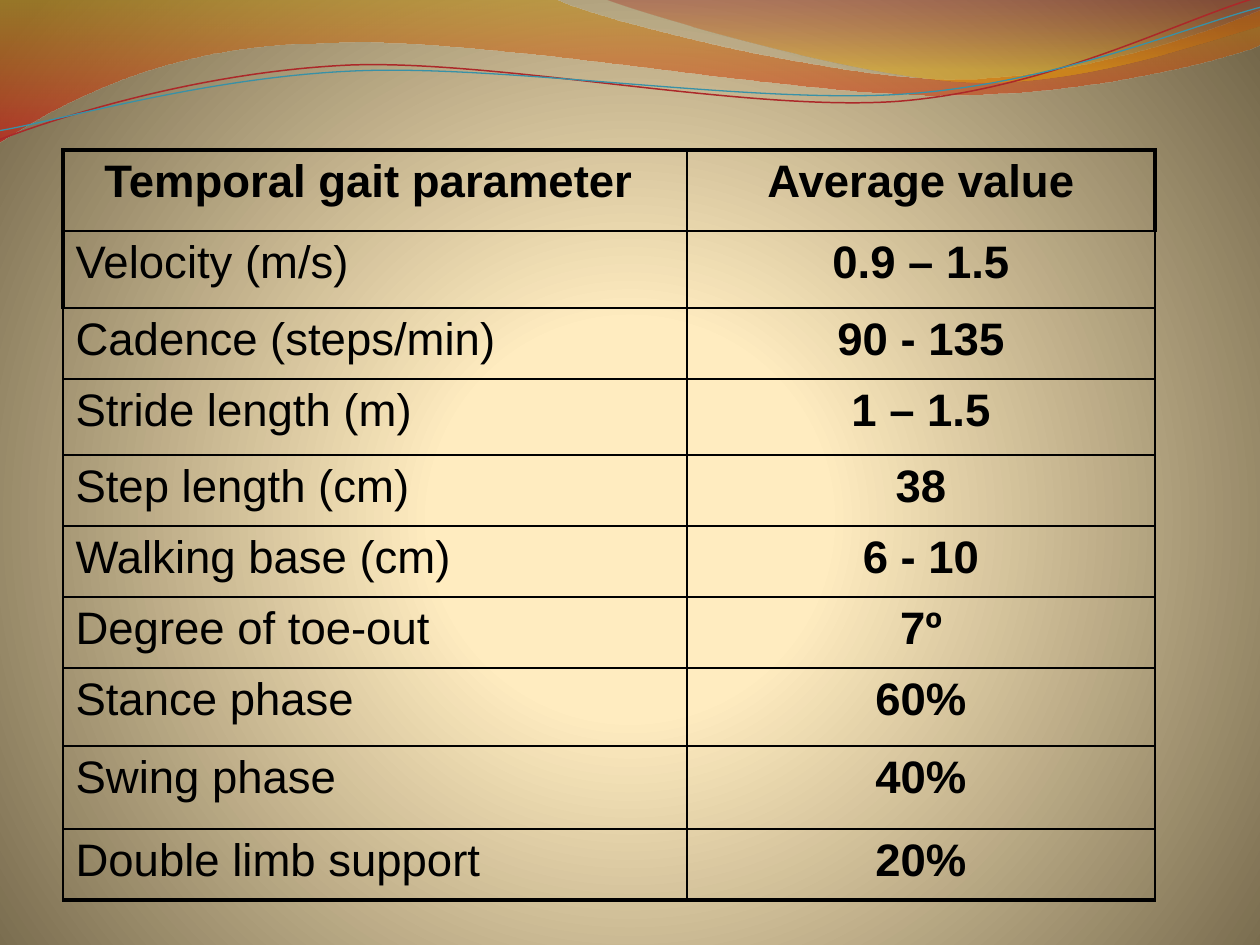
import pptx
import pptx.dml.color
import pptx.enum.text
import pptx.oxml
import pptx.oxml.ns
import pptx.util

PX = 914400 / 126
NS = pptx.oxml.ns.nsdecls("a")
qn = pptx.oxml.ns.qn
ALIGN = pptx.enum.text.PP_ALIGN

BAND = [[(554, -1)],
        [(600, 21), (837, 79), (955, 79)],
        [(1075, 79), (1207, 33), (1260, 11)],
        [(1261, 45)],
        [(1239, 55), (1096, 96), (940, 95)],
        [(784, 95), (481, 35), (324, 43)],
        [(163, 44), (58, 105), (-1, 142)]]
CREST = [[(641, 14), (859, 78), (969, 82)],
         [(1079, 87), (1211, 40), (1260, 26)],
         [(1260, 0)]]
RED_WAVE = [[(58, 90), (199, 52), (349, 52)],
            [(498, 53), (745, 118), (897, 114)],
            [(1049, 109), (1184, 45), (1261, 27)]]
BLUE_WAVE = [[(57, 94), (207, 57), (357, 58)],
             [(508, 59), (751, 110), (902, 107)],
             [(1053, 104), (1188, 53), (1263, 37)]]
ROWS = [("Temporal gait parameter ", "Average value", 81),
        ("Velocity (m/s)", "0.9 – 1.5", 77),
        ("Cadence (steps/min)", "90 - 135", 71),
        ("Stride length (m)", "1 – 1.5", 76),
        ("Step length (cm)", "38", 71),
        ("Walking base (cm)", "6 - 10", 71),
        ("Degree of toe-out", "7º", 71),
        ("Stance phase", "60%", 78),
        ("Swing phase", "40%", 83),
        ("Double limb support", "20%", 71)]


def emu(px):
    return pptx.util.Emu(round(px * PX))


def rgb(color):
    return pptx.dml.color.RGBColor.from_string(color)


def write(tf, text, font="Arial", size=26, color="000000", bold=False, align=ALIGN.LEFT):
    p = tf.paragraphs[0]
    p.alignment = align
    r = p.add_run()
    r.text = text
    r.font.name, r.font.size, r.font.bold = font, pptx.util.Pt(size), bold
    r.font.color.rgb = rgb(color)


def gradient(fill, holder, stops, shade):
    fill.gradient()
    marks = "".join(
        f'<a:gs pos="{pos * 1000}"><a:srgbClr val="{color}">'
        f'<a:alpha val="{alpha * 1000}"/></a:srgbClr></a:gs>'
        for pos, color, alpha in stops)
    old = holder.find(".//" + qn("a:gradFill"))
    new = pptx.oxml.parse_xml(
        f'<a:gradFill {NS} rotWithShape="1"><a:gsLst>{marks}</a:gsLst>{shade}</a:gradFill>')
    old.getparent().replace(old, new)


class Deck:
    """Holds the style and the current slide."""

    def __init__(self, width, height):
        self.prs = pptx.Presentation()
        self.prs.slide_width, self.prs.slide_height = emu(width), emu(height)
        self.s = self.prs.slides.add_slide(self.prs.slide_layouts[6])

    def backdrop(self, stops):
        shade = ('<a:path path="circle"><a:fillToRect l="10000" t="110000" '
                 'r="10000" b="100000"/></a:path>')
        gradient(self.s.background.fill, self.s.element, stops, shade)

    def curve(self, start, segments, close):
        builder = self.s.shapes.build_freeform(*start, scale=PX)
        builder.add_line_segments([pt for seg in segments for pt in seg], close=close)
        sp = builder.convert_to_shape()
        sp.shadow.inherit = False
        lines = iter(list(sp.element.iter(qn("a:lnTo"))))
        for seg in segments:
            first, *rest = [next(lines) for _ in seg]
            if rest:
                bezier = pptx.oxml.parse_xml(f"<a:cubicBezTo {NS}/>")
                first.addprevious(bezier)
                for line in (first, *rest):
                    bezier.append(line[0])
                    line.getparent().remove(line)
        return sp

    def ribbon(self, start, segments, stops):
        sp = self.curve(start, segments, True)
        gradient(sp.fill, sp.element, stops, '<a:lin ang="5400000" scaled="1"/>')
        sp.line.fill.background()

    def wave(self, start, segments, color, width):
        sp = self.curve(start, segments, False)
        sp.fill.background()
        sp.line.color.rgb = rgb(color)
        sp.line.width = pptx.util.Pt(width)
        sp.rotation = 357.3

    def border(self, cell, thick):
        tc_pr = cell._tc.get_or_add_tcPr()
        for i, side in enumerate("LRTB"):
            width = 28575 if side in thick else 12700
            tc_pr.insert(i, pptx.oxml.parse_xml(
                f'<a:ln{side} {NS} w="{width}"><a:solidFill><a:srgbClr val="000000"/>'
                f'</a:solidFill></a:ln{side}>'))

    def table(self, x, y, widths, rows):
        height = sum(row[-1] for row in rows)
        frame = self.s.shapes.add_table(
            len(rows), len(widths), emu(x), emu(y), emu(sum(widths)), emu(height))
        table = frame.table
        table.first_row = table.horz_banding = False
        for column, width in zip(table.columns, widths):
            column.width = emu(width)
        last = len(rows) - 1
        for i, (*texts, row_height) in enumerate(rows):
            table.rows[i].height = emu(row_height)
            for j, text in enumerate(texts):
                cell = table.cell(i, j)
                cell.fill.background()
                strong = i == 0 or j == 1
                write(cell.text_frame, text, bold=strong,
                      align=ALIGN.CENTER if strong else ALIGN.LEFT)
                thick = {0: "TL" if j == 0 else "TR", last: "B"}.get(i, "")
                self.border(cell, "L" if (i, j) == (1, 0) else thick)


def main():
    deck = Deck(1260, 945)
    deck.backdrop([(0, "FFECC2", 100), (25, "FFECC0", 100), (100, "74674A", 100)])
    deck.ribbon((0, -1), BAND, [(0, "C38B00", 45), (100, "D60305", 55)])
    deck.ribbon((604, -1), CREST, [(0, "A11112", 30), (80, "E9A600", 45)])
    deck.wave((-3, 110), RED_WAVE, "AC2829", 0.85)
    deck.wave((-3, 101), BLUE_WAVE, "3891A7", 0.75)
    deck.table(63, 150, [624, 468], ROWS)
    deck.prs.save("out.pptx")


if __name__ == "__main__":
    main()
